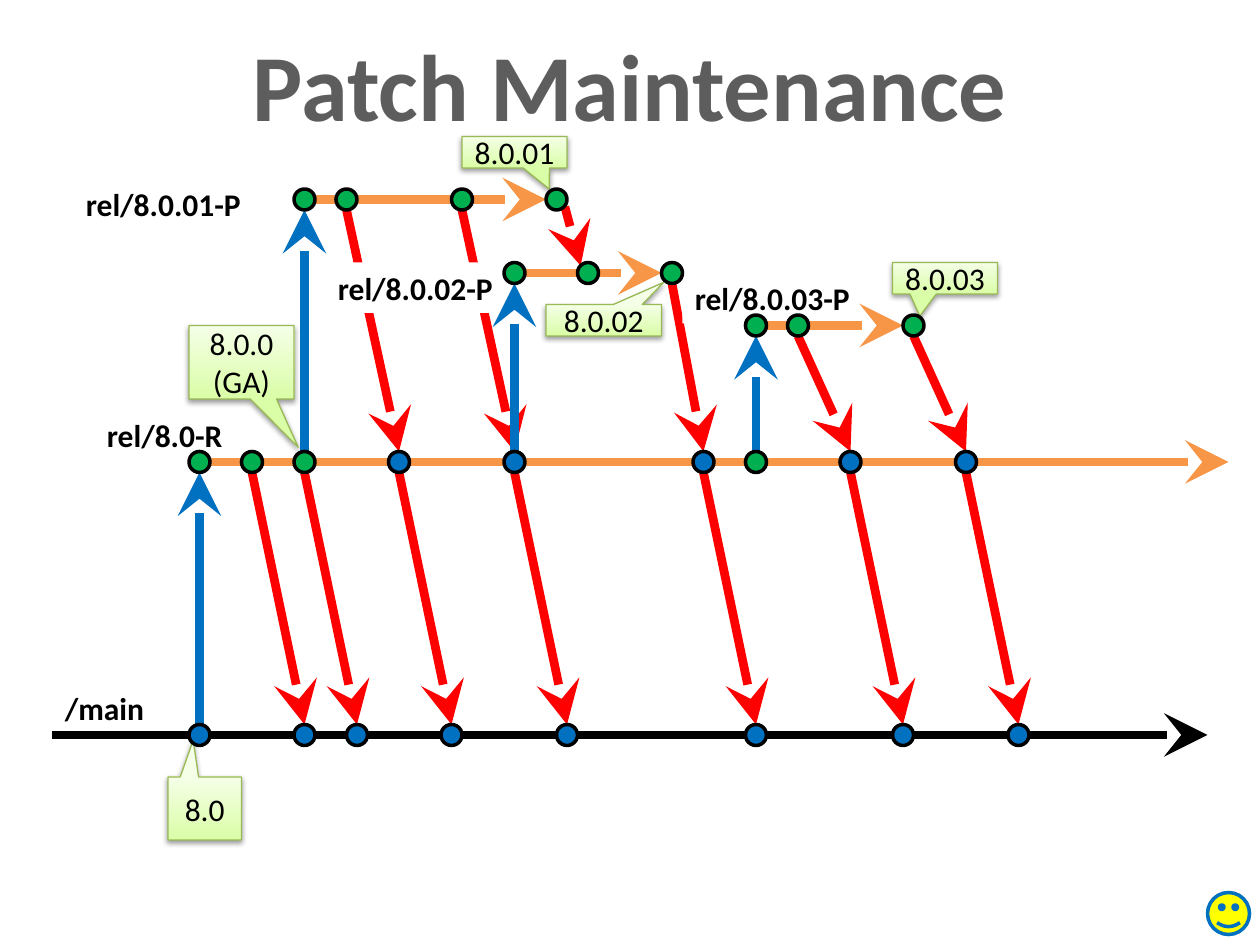
from dataclasses import dataclass
from typing import NamedTuple

from lxml.etree import SubElement
from pptx import Presentation
from pptx.dml.color import RGBColor as Rgb
from pptx.enum.shapes import MSO_CONNECTOR as Link, MSO_SHAPE as Kind
from pptx.enum.text import MSO_ANCHOR as Anchor, PP_ALIGN as Align
from pptx.oxml.ns import qn
from pptx.util import Emu, Pt

SCALE = 7620  # EMU per px, 120 px to the inch
RAD = 10      # node radius in px


@dataclass(frozen=True)
class Theme:
    font: str = "Calibri"
    title: int = 54
    body: int = 18
    bar: int = 5
    rim: int = 2
    grey: str = "5D5D5D"
    black: str = "000000"
    white: str = "FFFFFF"
    red: str = "FF0000"
    blue: str = "0070C0"
    green: str = "00B050"
    orange: str = "F79646"
    yellow: str = "FFFF00"
    pale: str = "F5FFE7"
    lime: str = "DAFDA7"
    edge: str = "98B955"


T = Theme()


class Lane(NamedTuple):
    y: int
    start: int
    end: int
    color: str
    green: tuple
    blue: tuple


class Merge(NamedTuple):
    lane: Lane
    x: int
    goal: Lane
    to: int


class Fork(NamedTuple):
    x: int
    lane: Lane
    goal: Lane


class Label(NamedTuple):
    words: str
    x: int
    y: int
    w: int


class Note(NamedTuple):
    words: str
    x: int
    y: int
    w: int
    h: int
    tip: tuple


# Branches
MAIN = Lane(700, 50, 1150, T.black, (),
            (190, 290, 340, 430, 540, 720, 860, 970))
REL = Lane(440, 200, 1170, T.orange, (190, 240, 290, 720),
           (380, 490, 670, 810, 920))
P1 = Lane(190, 290, 520, T.orange, (290, 330, 440, 530), ())
P2 = Lane(260, 490, 630, T.orange, (490, 560, 640), ())
P3 = Lane(310, 720, 860, T.orange, (720, 760, 870), ())
LANES = (MAIN, REL, P1, P2, P3)

# Merges run down, forks run up
MERGES = [Merge(REL, x, MAIN, x + 50) for x in (240, 290, *REL.blue)] + [
    Merge(P1, 330, REL, 380), Merge(P1, 440, REL, 490),
    Merge(P2, 640, REL, 670),
    Merge(P3, 760, REL, 810), Merge(P3, 870, REL, 920)]
FORKS = (Fork(190, MAIN, REL), Fork(290, REL, P1),
         Fork(490, REL, P2), Fork(720, REL, P3))

LABELS = (Label("rel/8.0.01-P", 70, 170, 190),
          Label("rel/8.0.02-P", 310, 250, 180),
          Label("rel/8.0.03-P", 650, 260, 190),
          Label("rel/8.0-R", 90, 390, 150),
          Label("/main", 50, 650, 130))
NOTES = (Note("8.0.01", 440, 130, 100, 30, (523, 180)),
         Note("8.0.02", 520, 290, 110, 30, (632, 269)),
         Note("8.0.03", 850, 250, 100, 30, (876, 301)),
         Note("8.0.0 (GA)", 180, 310, 100, 70, (284, 426)),
         Note("8.0", 160, 740, 70, 60, (184, 705)))


def px(*sizes: int) -> list:
    return [Emu(s * SCALE) for s in sizes]


def text(shape, words: str, *, size: int = T.body, color: str = T.black,
         bold: bool = False, align=Align.LEFT, anchor=Anchor.TOP) -> None:
    frame = shape.text_frame
    frame.word_wrap = True
    frame.vertical_anchor = anchor
    par = frame.paragraphs[0]
    par.alignment = align
    run = par.add_run()
    run.text = words
    font = run.font
    font.name, font.size, font.bold = T.font, Pt(size), bold
    font.color.rgb = Rgb.from_string(color)


def arrow(shapes, x1: int, y1: int, x2: int, y2: int, color: str) -> None:
    bar = shapes.add_connector(Link.STRAIGHT, *px(x1, y1, x2, y2))
    bar.line.width = Pt(T.bar)
    bar.line.color.rgb = Rgb.from_string(color)
    SubElement(bar.line._get_or_add_ln(), qn("a:tailEnd"),
               type="stealth", w="lg", len="lg")
    SubElement(bar._element.spPr, qn("a:effectLst"))


def disc(shapes, kind, x: int, y: int, r: int, fill: str, rim: str) -> None:
    dot = shapes.add_shape(kind, *px(x - r, y - r, 2 * r, 2 * r))
    dot.shadow.inherit = False
    dot.fill.solid()
    dot.fill.fore_color.rgb = Rgb.from_string(fill)
    dot.line.color.rgb = Rgb.from_string(rim)
    dot.line.width = Pt(T.rim)


def label(shapes, tag: Label) -> None:
    box = shapes.add_textbox(*px(tag.x, tag.y, tag.w, 48))
    box.fill.solid()
    box.fill.fore_color.rgb = Rgb.from_string(T.white)
    text(box, tag.words, bold=True)


def note(shapes, n: Note) -> None:
    box = shapes.add_shape(Kind.RECTANGULAR_CALLOUT, *px(n.x, n.y, n.w, n.h))
    box.adjustments[0] = (n.tip[0] - n.x) / n.w - 0.5
    box.adjustments[1] = (n.tip[1] - n.y) / n.h - 0.5
    box.fill.gradient()
    box.fill.gradient_angle = 90
    for stop, color in zip(box.fill.gradient_stops, (T.lime, T.pale)):
        stop.color.rgb = Rgb.from_string(color)
    box.line.color.rgb = Rgb.from_string(T.edge)
    box.line.width = Pt(0.75)
    # Soft shadow below
    box.shadow.inherit = False
    glow = SubElement(box._element.spPr.find(qn("a:effectLst")),
                      qn("a:outerShdw"), blurRad=str(Pt(3.1)),
                      dist=str(Pt(1.6)), dir="5400000", rotWithShape="0")
    tone = SubElement(glow, qn("a:srgbClr"), val=T.black)
    SubElement(tone, qn("a:alpha"), val="38000")
    text(box, n.words, align=Align.CENTER, anchor=Anchor.MIDDLE)


def main() -> None:
    deck = Presentation()
    deck.slide_width, deck.slide_height = px(1200, 900)
    shapes = deck.slides.add_slide(deck.slide_layouts[6]).shapes

    # Title
    text(shapes.add_textbox(*px(0, 20, 1200, 121)), "Patch Maintenance",
         size=T.title, color=T.grey, bold=True, align=Align.CENTER)

    # Merges, with the slanted one between the first two patches
    arrow(shapes, 538, 197, 553, 253, T.red)
    for m in MERGES:
        arrow(shapes, m.x, m.lane.y + RAD, m.to, m.goal.y - RAD, T.red)

    # Names and version notes
    for tag in LABELS:
        label(shapes, tag)
    for n in NOTES:
        note(shapes, n)

    # Branches, forks and nodes
    for lane in LANES:
        arrow(shapes, lane.start, lane.y, lane.end, lane.y, lane.color)
    for f in FORKS:
        arrow(shapes, f.x, f.lane.y - RAD, f.x, f.goal.y + RAD, T.blue)
    for lane in LANES:
        for dots, color in ((lane.green, T.green), (lane.blue, T.blue)):
            for x in dots:
                disc(shapes, Kind.OVAL, x, lane.y, RAD, color, T.black)

    # Smiley in the corner
    disc(shapes, Kind.SMILEY_FACE, 1170, 870, 20, T.yellow, T.blue)
    deck.save("out.pptx")


if __name__ == "__main__":
    main()
